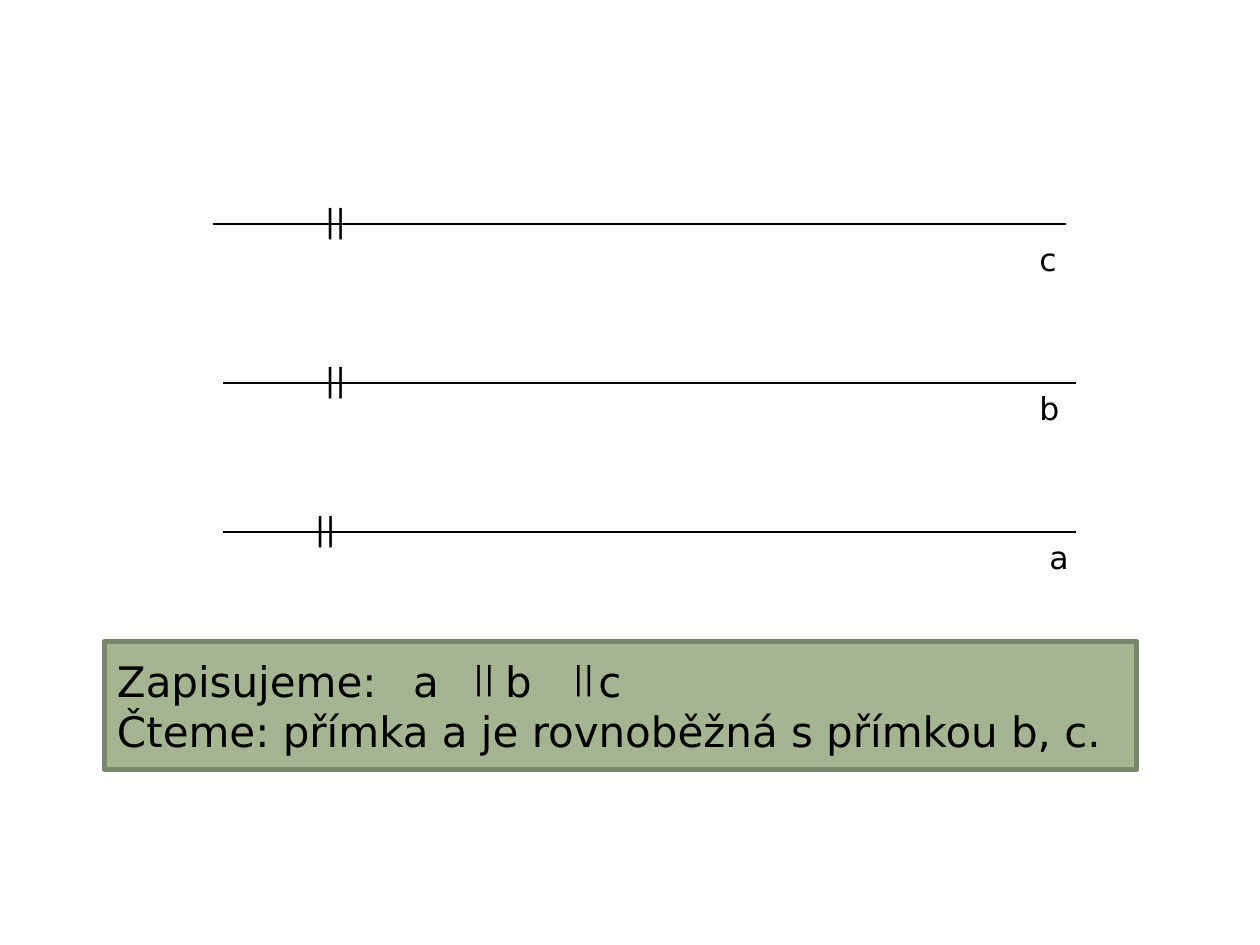
from pptx import Presentation
from pptx.dml.color import RGBColor
from pptx.enum.shapes import MSO_CONNECTOR, MSO_SHAPE
from pptx.enum.text import MSO_ANCHOR, PP_ALIGN
from pptx.oxml.ns import qn
from pptx.util import Inches, Pt
from lxml.etree import SubElement

COLUMNS, ROWS = 100, 75
FONT = "DejaVu Sans"
BLACK, GREEN, DARK_GREEN = "000000", "A5B592", "7A866C"
PARALLEL = "||"


def color(value):
    return RGBColor.from_string(value)


def write_text(frame, text, size=18, fill=BLACK, anchor=MSO_ANCHOR.TOP, wrap=True, tabs=()):
    """Fill the frame, one paragraph a line; tabs are stops in inches."""
    frame.word_wrap = wrap
    frame.vertical_anchor = anchor
    for number, line in enumerate(text.split("\n")):
        paragraph = frame.add_paragraph() if number else frame.paragraphs[0]
        paragraph.alignment = PP_ALIGN.LEFT
        if "\t" in line:
            tab_list = SubElement(paragraph._p.get_or_add_pPr(), qn("a:tabLst"))
            for stop in tabs:
                SubElement(tab_list, qn("a:tab"), pos=str(Inches(stop)), algn="l")
        run = paragraph.add_run()
        run.text = line
        run.font.name = FONT
        run.font.size = Pt(size)
        run.font.color.rgb = color(fill)


class SlideBuilder:
    """Places elements on a slide by columns and rows of its grid."""

    def __init__(self, presentation):
        self.column = presentation.slide_width / COLUMNS
        self.row = presentation.slide_height / ROWS
        self.slide = presentation.slides.add_slide(presentation.slide_layouts[6])

    def place(self, left, top, width, height):
        return (round(left * self.column), round(top * self.row),
                round(width * self.column), round(height * self.row))

    def horizontal_line(self, left, top, width):
        x, y, length, _ = self.place(left, top, width, 0)
        line = self.slide.shapes.add_connector(MSO_CONNECTOR.STRAIGHT, x, y, x + length, y)
        line.line.color.rgb = color(BLACK)
        line.line.width = Pt(1)
        SubElement(line._element.spPr, qn("a:effectLst"))

    def label(self, text, left, top, width=4.7):
        box = self.slide.shapes.add_textbox(*self.place(left, top, width, 4))
        write_text(box.text_frame, text)

    def panel(self, text, left, top, width, height, **text_format):
        shape = self.slide.shapes.add_shape(
            MSO_SHAPE.RECTANGLE, *self.place(left, top, width, height))
        shape.shadow.inherit = False
        shape.fill.solid()
        shape.fill.fore_color.rgb = color(GREEN)
        shape.line.color.rgb = color(DARK_GREEN)
        shape.line.width = Pt(3)
        write_text(shape.text_frame, text, anchor=MSO_ANCHOR.MIDDLE, **text_format)


def main():
    presentation = Presentation()
    presentation.slide_width, presentation.slide_height = Inches(10), Inches(7.5)
    builder = SlideBuilder(presentation)

    # name, line left, line top, mark left, name left, name top, name width
    parallel_lines = [
        ("c", 16.9, 17.8, 24.8, 81.5, 18.6, 2.4),
        ("b", 17.7, 30.4, 24.8, 81.5, 30.4, 3.9),
        ("a", 17.7, 42.2, 24.0, 82.3, 42.2, 3.1),
    ]
    for name, left, top, mark_left, name_left, name_top, name_width in parallel_lines:
        builder.horizontal_line(left, top, 67.7)
        builder.label(PARALLEL, mark_left, top - 2.3)
        builder.label(name, name_left, name_top, name_width)

    builder.panel("Zapisujeme:\ta\tb\tc\nČteme: přímka a je rovnoběžná s přímkou b, c.",
                  8.3, 50.9, 81.9, 10.2, size=24, tabs=(2.35, 3.08, 3.82))
    for mark_left in (36.6, 44.5):
        builder.label(PARALLEL, mark_left, 51.7)

    presentation.save("out.pptx")


if __name__ == "__main__":
    main()
